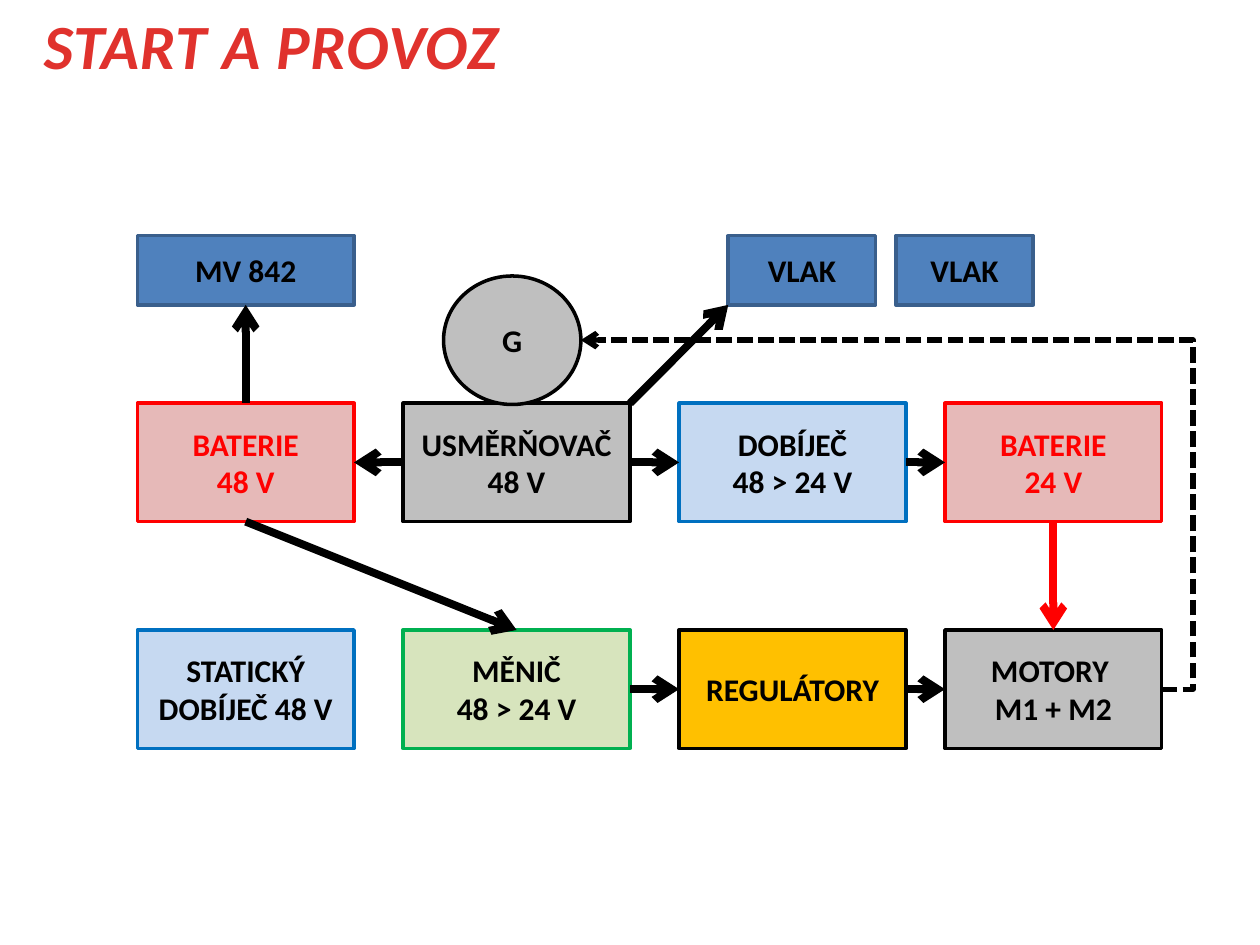
from lxml.etree import SubElement
from pptx import Presentation
from pptx.dml.color import RGBColor
from pptx.enum.dml import MSO_LINE
from pptx.enum.shapes import MSO_CONNECTOR, MSO_SHAPE
from pptx.enum.text import MSO_ANCHOR, MSO_AUTO_SIZE, PP_ALIGN
from pptx.oxml.ns import qn
from pptx.util import Inches, Pt

BLACK = RGBColor(0x00, 0x00, 0x00)
RED = RGBColor(0xFF, 0x00, 0x00)
TITLE_RED = RGBColor(0xE0, 0x32, 0x2D)
PINK = RGBColor(0xE6, 0xB9, 0xB8)
GREY = RGBColor(0xBF, 0xBF, 0xBF)
PALE_BLUE = RGBColor(0xC6, 0xD9, 0xF1)
BLUE = RGBColor(0x00, 0x70, 0xC0)
PALE_GREEN = RGBColor(0xD7, 0xE4, 0xBD)
GREEN = RGBColor(0x00, 0xB0, 0x50)
AMBER = RGBColor(0xFF, 0xC0, 0x00)
STEEL = RGBColor(0x4F, 0x81, 0xBD)
DARK_STEEL = RGBColor(0x3A, 0x5F, 0x8C)

TOP, LEFT, BOTTOM, RIGHT = range(4)
COLUMNS = [(1.09, 1.72), (3.2, 1.8), (5.39, 1.8), (7.5, 1.72)]
TRAIN_TOP, SUPPLY_TOP, DRIVE_TOP = 1.87, 3.2, 5
TRAIN_HEIGHT, BOX_HEIGHT = 0.55, 0.94


class Diagram:
    font = "Calibri"

    def __init__(self, page):
        self.page = page

    def format_text(self, frame, size, color, italic=False):
        for para in frame.paragraphs:
            para.alignment = PP_ALIGN.CENTER
            for span in para.runs:
                span.font.name = self.font
                span.font.size = Pt(size)
                span.font.bold = True
                span.font.italic = italic
                span.font.color.rgb = color

    def title(self, text, left, top, width, height):
        title = self.page.shapes.title
        title.left, title.top = Inches(left), Inches(top)
        title.width, title.height = Inches(width), Inches(height)
        frame = title.text_frame
        frame.text = text
        frame.word_wrap = False
        frame.auto_size = MSO_AUTO_SIZE.SHAPE_TO_FIT_TEXT
        frame.vertical_anchor = MSO_ANCHOR.TOP
        self.format_text(frame, 36, TITLE_RED, italic=True)
        frame.paragraphs[0].runs[0].font._element.set("spc", "50")

    def box(self, text, left, top, width, height, fill, line,
            color=BLACK, kind=MSO_SHAPE.RECTANGLE):
        box = self.page.shapes.add_shape(
            kind, Inches(left), Inches(top), Inches(width), Inches(height))
        box.shadow.inherit = False
        box.fill.solid()
        box.fill.fore_color.rgb = fill
        box.line.color.rgb = line
        box.line.width = Pt(2)
        frame = box.text_frame
        frame.text = text
        frame.word_wrap = True
        frame.vertical_anchor = MSO_ANCHOR.MIDDLE
        self.format_text(frame, 18, color)
        return box

    def arrow(self, start, end, color=BLACK, width=4.5,
              kind=MSO_CONNECTOR.STRAIGHT):
        arrow = self.page.shapes.add_connector(
            kind, *(Inches(value) for value in (*start, *end)))
        arrow.line.color.rgb = color
        arrow.line.width = Pt(width)
        SubElement(arrow.line._get_or_add_ln(), qn("a:tailEnd"), type="arrow")
        SubElement(arrow._element.spPr, qn("a:effectLst"))
        return arrow

    def link(self, source, source_side, target, target_side, color=BLACK):
        """Join the middles of two box sides with an arrow."""
        arrow = self.arrow((0, 0), (0, 0), color)
        arrow.begin_connect(source, source_side)
        arrow.end_connect(target, target_side)

    def feedback(self, start, end, bend):
        """Draw a dashed elbow arrow; bend is the turn as a share of its width."""
        arrow = self.arrow(start, end, width=3, kind=MSO_CONNECTOR.ELBOW)
        arrow.line.dash_style = MSO_LINE.SQUARE_DOT
        geometry = arrow._element.spPr.find(qn("a:prstGeom"))
        guides = geometry.find(qn("a:avLst"))
        if guides is None:
            guides = SubElement(geometry, qn("a:avLst"))
        SubElement(guides, qn("a:gd"), name="adj1",
                   fmla=f"val {round(bend * 100000)}")

    def row(self, top, boxes):
        return [self.box(text, left, top, width, BOX_HEIGHT, *style)
                for (left, width), (text, *style) in zip(COLUMNS, boxes)]


def main():
    deck = Presentation()
    deck.slide_width, deck.slide_height = Inches(10), Inches(7.5)
    diagram = Diagram(deck.slides.add_slide(deck.slide_layouts[5]))
    diagram.title("START A PROVOZ", 0, 0, 4.3, 0.71)

    battery_48, rectifier, charger, battery_24 = diagram.row(SUPPLY_TOP, [
        ("BATERIE\n48 V", PINK, RED, RED),
        ("USMĚRŇOVAČ\n48 V", GREY, BLACK),
        ("DOBÍJEČ\n48 > 24 V", PALE_BLUE, BLUE),
        ("BATERIE\n24 V", PINK, RED, RED),
    ])
    _, converter, regulators, motors = diagram.row(DRIVE_TOP, [
        ("STATICKÝ\nDOBÍJEČ 48 V", PALE_BLUE, BLUE),
        ("MĚNIČ\n48 > 24 V", PALE_GREEN, GREEN),
        ("REGULÁTORY", AMBER, BLACK),
        ("MOTORY \nM1 + M2", GREY, BLACK),
    ])
    diagram.box("G", 3.52, 2.19, 1.09, 1.02, GREY, BLACK, kind=MSO_SHAPE.OVAL)
    vehicle, _, _ = [
        diagram.box(text, left, TRAIN_TOP, width, TRAIN_HEIGHT, STEEL, DARK_STEEL)
        for text, left, width in [
            ("MV 842", 1.09, 1.72), ("VLAK", 5.78, 1.17), ("VLAK", 7.11, 1.09)]
    ]

    diagram.link(battery_48, BOTTOM, converter, TOP)
    diagram.link(battery_48, TOP, vehicle, BOTTOM)
    diagram.link(battery_24, BOTTOM, motors, TOP, RED)
    diagram.link(rectifier, LEFT, battery_48, RIGHT)
    for source, target in [(rectifier, charger), (charger, battery_24),
                           (converter, regulators), (regulators, motors)]:
        diagram.link(source, RIGHT, target, LEFT)
    diagram.arrow((5, SUPPLY_TOP), (5.78, TRAIN_TOP + TRAIN_HEIGHT))
    diagram.feedback((9.22, DRIVE_TOP + BOX_HEIGHT / 2), (4.61, 2.7), bend=-0.054)

    deck.save("out.pptx")


if __name__ == "__main__":
    main()
